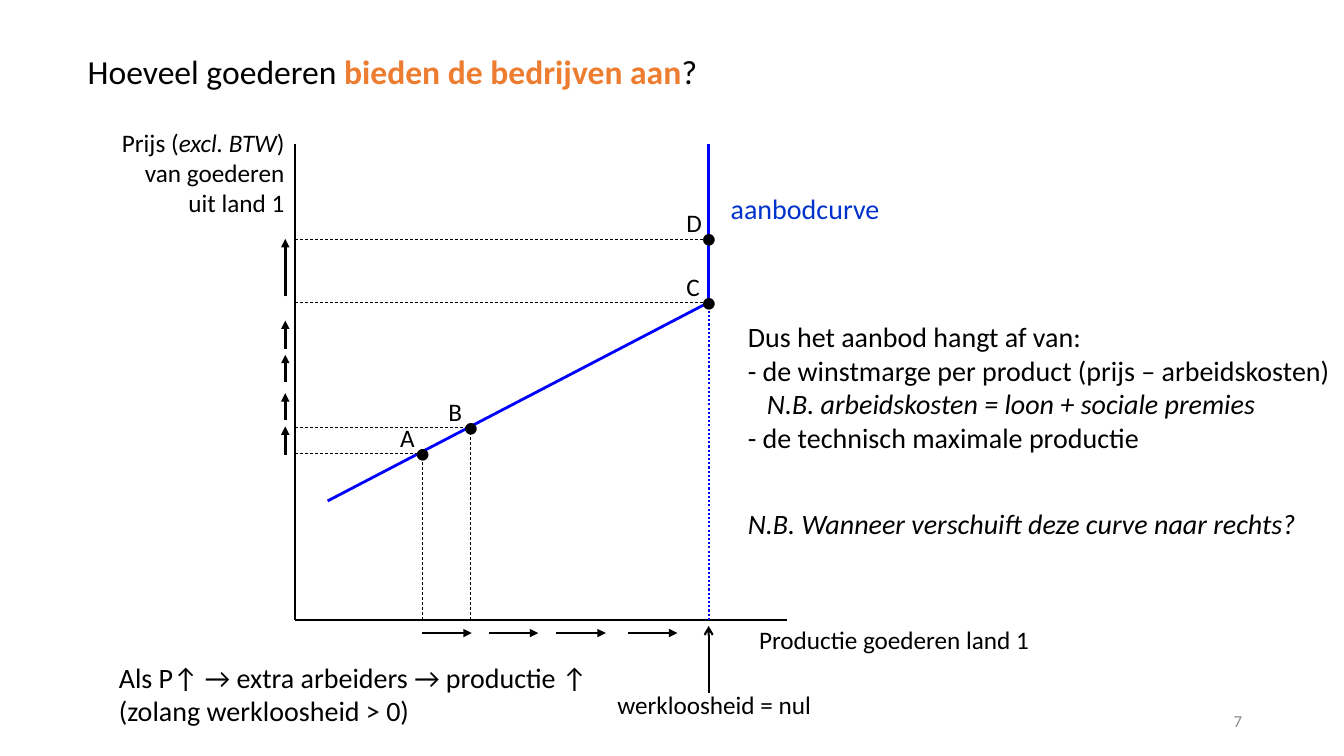
from dataclasses import dataclass
from lxml.etree import SubElement
from pptx import Presentation
from pptx.dml.color import RGBColor as Rgb
from pptx.enum.dml import MSO_LINE as Dash
from pptx.enum.shapes import MSO_CONNECTOR as Connector
from pptx.enum.text import MSO_ANCHOR as Anchor, MSO_AUTO_SIZE as AutoSize, PP_ALIGN as Align
from pptx.oxml.ns import qn
from pptx.util import Inches, Pt


@dataclass(frozen=True)
class Theme:
    font: str = "Calibri"
    ink: str = "000000"
    curve: str = "0000FF"
    curve_label: str = "0033CC"
    accent: str = "ED7D31"
    muted: str = "8C8C8C"
    title: int = 24
    body: int = 20
    label: int = 18
    number: int = 12


theme = Theme()
CELL = Inches(0.1)
COLUMNS, ROWS = 133.33, 75


def write(frame, paragraphs, size, color=theme.ink, align=Align.LEFT):
    for index, runs in enumerate(paragraphs):
        paragraph = frame.paragraphs[0] if index == 0 else frame.add_paragraph()
        paragraph.alignment = align
        for words, style in runs:
            run = paragraph.add_run()
            run.text = words
            run.font.name, run.font.size = theme.font, Pt(size)
            run.font.bold, run.font.italic = style == "bold", style == "italic"
            run.font.color.rgb = Rgb.from_string(theme.accent if style == "bold" else color)


def draw_line(start, end, weight, color=theme.ink, dash=None, head=None):
    line = slide.shapes.add_connector(
        Connector.STRAIGHT, *(int(cells * CELL) for cells in (*start, *end)))
    line.line.width = Pt(weight)
    line.line.color.rgb = Rgb.from_string(color)
    if dash:
        line.line.dash_style = dash
    properties = line._element.spPr
    if head:
        SubElement(properties.find(qn("a:ln")), qn("a:tailEnd"), type=head)
    SubElement(properties, qn("a:effectLst"))


deck = Presentation()
deck.slide_width, deck.slide_height = int(COLUMNS * CELL), ROWS * CELL
slide = deck.slides.add_slide(deck.slide_layouts[5])

title = slide.shapes.title
title.left, title.top, title.width, title.height = (
    int(cells * CELL) for cells in (7.7, 4.5, 63.7, 8.1))
title.text_frame.auto_size = AutoSize.NONE
title.text_frame.vertical_anchor = Anchor.TOP
write(title.text_frame, [[("Hoeveel goederen ", ""), ("bieden de bedrijven aan", "bold"), ("?", "")]],
      theme.title)

origin_x, origin_y, axis_top, axis_right = 29.3, 61.5, 14.3, 78.1
points = {"A": (41.9, 45), "B": (46.7, 42.4), "C": (70.3, 30), "D": (70.3, 23.7)}
full_employment, kink = points["C"]

draw_line((origin_x, axis_top), (origin_x, origin_y), 1.5)
draw_line((origin_x, origin_y), (axis_right, origin_y), 1.5)
draw_line((32.5, 49.7), points["C"], 2, theme.curve)
draw_line((full_employment, axis_top), points["C"], 2, theme.curve)
draw_line(points["C"], (full_employment, origin_y), 1.5, theme.curve, Dash.ROUND_DOT)
draw_line((full_employment, 68.8), (full_employment, 62.1), 1.5, head="arrow")

for x, y in points.values():
    draw_line((origin_x, y), (x, y), 0.5, dash=Dash.DASH)
for name in "AB":
    x, y = points[name]
    draw_line((x, origin_y), (x, y), 0.5, dash=Dash.DASH)

for start, end in ((45.1, 42.3), (41.7, 39), (37.9, 35.2), (34.6, 31.8), (29.4, 23.7)):
    draw_line((28.3, start), (28.3, end), 2, head="triangle")
for start in (41.9, 48.5, 55.2, 62.3):
    draw_line((start, 62.8), (start + 4.9, 62.8), 2, head="triangle")

texts = [
    ((10.8, 12.1, 18.4, 10.1), [[("Prijs (", ""), ("excl. BTW", "italic"), (")", "")],
                                [("van goederen uit land 1", "")]],
     theme.label, theme.ink, Align.RIGHT),
    ((69.8, 61.4, 37.8, 4), [[("Productie goederen land 1", "")]],
     theme.label, theme.ink, Align.CENTER),
    ((55.1, 67.9, 31.5, 4), [[("werkloosheid = nul", "")]],
     theme.label, theme.ink, Align.CENTER),
    ((10.8, 65, 60.8, 7.7), [[("Als P↑ → extra arbeiders → productie ↑", "")],
                             [("(zolang werkloosheid > 0)", "")]],
     theme.body, theme.ink, Align.LEFT),
    ((71.5, 18.5, 16.9, 4.4), [[("aanbodcurve", "")]],
     theme.body, theme.curve_label, Align.LEFT),
    ((73.2, 49.8, 58.2, 4.4), [[("N.B. Wanneer verschuift deze curve naar rechts?", "italic")]],
     theme.body, theme.ink, Align.LEFT),
    ((94.2, 70, 30, 4), [[("7", "")]], theme.number, theme.muted, Align.RIGHT),
    ((73.2, 31.2, 60.1, 14.5), [[("Dus het aanbod hangt af van:", "")],
                                [("- de winstmarge per product (prijs – arbeidskosten)", "")],
                                [("N.B. arbeidskosten = loon + sociale premies", "italic")],
                                [("- de technisch maximale productie", "")]],
     theme.body, theme.ink, Align.LEFT),
]
for name, (x, y) in points.items():
    texts.append(((x - 1.7, y - 2.1, 6.7, 4), [[("●", "")]], theme.label, theme.ink, Align.LEFT))
    texts.append(((x - 3.2, y - 3.6, 4.1, 4), [[(name, "")]], theme.label, theme.ink, Align.LEFT))

for area, paragraphs, size, color, align in texts:
    frame = slide.shapes.add_textbox(*(int(cells * CELL) for cells in area)).text_frame
    frame.word_wrap = len(paragraphs) < 4
    write(frame, paragraphs, size, color, align)
    if len(paragraphs) == 4:
        frame.paragraphs[2]._p.get_or_add_pPr().set("marL", str(int(1.9 * CELL)))

deck.save("out.pptx")
